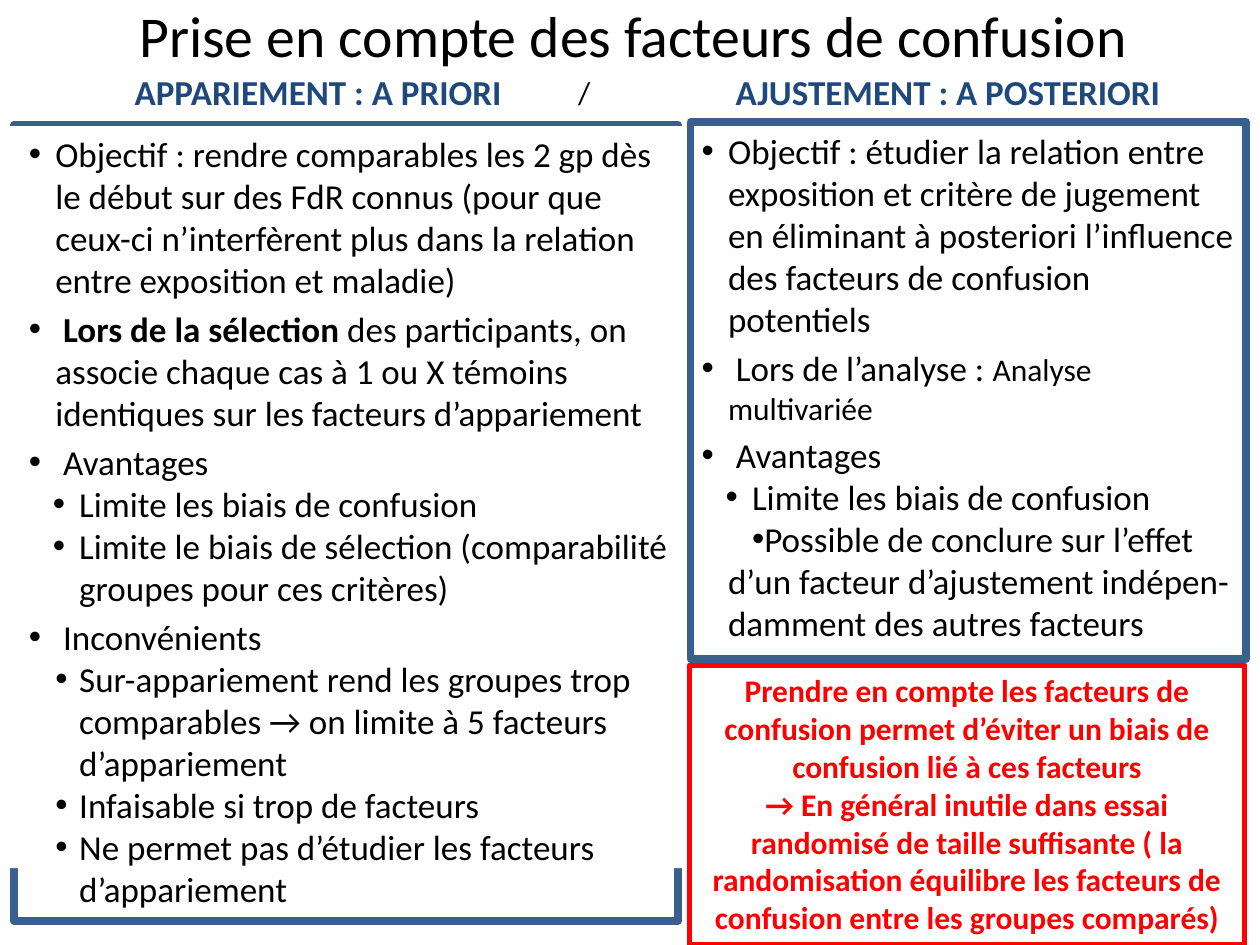
from lxml import etree
from pptx import Presentation
from pptx.dml.color import RGBColor
from pptx.enum.shapes import MSO_SHAPE
from pptx.enum.text import MSO_ANCHOR, PP_ALIGN
from pptx.oxml.ns import qn
from pptx.util import Inches, Pt

RECT = MSO_SHAPE.RECTANGLE
TOP, MIDDLE = MSO_ANCHOR.TOP, MSO_ANCHOR.MIDDLE
LEFT, CENTER = PP_ALIGN.LEFT, PP_ALIGN.CENTER
BLANK = 6
WIDTH, HEIGHT = 10, 7.5
COLS, ROWS = 100, 75
BLACK, WHITE, NAVY, BLUE, RED = "000000", "FFFFFF", "1F497D", "3A5F8C", "FF0000"

MAIN = {"level": 0, "margin": 0.4, "indent": -0.21, "before": 4}
FIRST = {**MAIN, "before": 0}
SUB = {"level": 1, "margin": 0.59, "indent": -0.21, "before": 0}
TIGHT = {**SUB, "indent": -0.19}
HANGING = {**SUB, "margin": 0.4, "indent": 0.19}

PRIOR = [
    (FIRST, ["Objectif : rendre comparables les 2 gp dès le début sur des FdR connus "
             "(pour que ceux-ci n’interfèrent plus dans la relation entre exposition et maladie)"]),
    (MAIN, [(" Lors de la sélection ", {"bold": True}),
            "des participants, on associe chaque cas à 1 ou X témoins identiques "
            "sur les facteurs d’appariement"]),
    (MAIN, [" Avantages"]),
    (SUB, ["Limite les biais de confusion"]),
    (SUB, ["Limite le biais de sélection (comparabilité groupes pour ces critères)"]),
    (MAIN, [" Inconvénients"]),
    (TIGHT, ["Sur-appariement rend les groupes trop comparables → on limite à 5 facteurs d’appariement"]),
    (TIGHT, ["Infaisable si trop de facteurs"]),
    (TIGHT, ["Ne permet pas d’étudier les facteurs d’appariement"]),
]
POSTERIOR = [
    (FIRST, ["Objectif : étudier la relation entre exposition et critère de jugement "
             "en éliminant à posteriori l’influence des facteurs de confusion potentiels"]),
    (MAIN, [" Lors de l’analyse : ", ("Analyse multivariée", {"size": 18})]),
    (MAIN, [" Avantages"]),
    (SUB, ["Limite les biais de confusion"]),
    (HANGING, ["Possible de conclure sur l’effet d’un facteur d’ajustement indépen- "
               "damment des autres facteurs"]),
]
CONCLUSION = [
    "Prendre en compte les facteurs de confusion permet d’éviter un biais de confusion lié à ces facteurs",
    "→ En général inutile dans essai randomisé de taille suffisante "
    "( la randomisation équilibre les facteurs de confusion entre les groupes comparés)",
]


def rgb(value):
    return RGBColor.from_string(value)


class Deck:
    font = "Calibri"

    def __init__(self):
        self.prs = Presentation()
        self.prs.slide_width, self.prs.slide_height = Inches(WIDTH), Inches(HEIGHT)
        self.s = self.prs.slides.add_slide(self.prs.slide_layouts[BLANK])

    def place(self, col, row, cols, rows):
        x, y = WIDTH / COLS, HEIGHT / ROWS
        return [Inches(v) for v in (col * x, row * y, cols * x, rows * y)]

    def frame(self, box, color, width):
        sp = self.s.shapes.add_shape(RECT, *self.place(*box))
        sp.shadow.inherit = False
        sp.fill.solid()
        sp.fill.fore_color.rgb = rgb(WHITE)
        sp.line.color.rgb = rgb(color)
        sp.line.width = Pt(width)
        return sp

    def textbox(self, box, fill=None):
        sp = self.s.shapes.add_textbox(*self.place(*box))
        if fill:
            sp.fill.solid()
            sp.fill.fore_color.rgb = rgb(fill)
        return sp

    def run(self, p, text, size, color, bold=False):
        r = p.add_run()
        r.text = text
        style = {"name": self.font, "size": Pt(size), "bold": bold}
        for name, value in style.items():
            setattr(r.font, name, value)
        r.font.color.rgb = rgb(color)

    def paragraphs(self, sp, count, anchor, wrap=True):
        tf = sp.text_frame
        for name, value in {"word_wrap": wrap, "vertical_anchor": anchor}.items():
            setattr(tf, name, value)
        return [tf.paragraphs[0]] + [tf.add_paragraph() for _ in range(count - 1)]

    def lines(self, sp, texts, size, color, align=LEFT, anchor=MIDDLE, wrap=True, bold=False):
        for p, text in zip(self.paragraphs(sp, len(texts), anchor, wrap), texts):
            p.alignment = align
            self.run(p, text, size, color, bold)

    def bullets(self, sp, items):
        for p, (layout, runs) in zip(self.paragraphs(sp, len(items), TOP), items):
            pPr = p._p.get_or_add_pPr()
            pPr.set("marL", str(Inches(layout["margin"])))
            pPr.set("indent", str(Inches(layout["indent"])))
            etree.SubElement(pPr, qn("a:buFont")).set("typeface", "Arial")
            etree.SubElement(pPr, qn("a:buChar")).set("char", "•")
            p.level = layout["level"]
            p.space_before = Pt(layout["before"])
            for item in runs:
                text, extra = (item, {}) if isinstance(item, str) else item
                self.run(p, text, **{"size": 20, "color": BLACK, **extra})


def main():
    deck = Deck()
    deck.frame((54.8, 9.7, 44.1, 42.6), BLUE, 4.5)
    deck.frame((1.1, 9.9, 52.7, 63.2), BLUE, 4.5)
    deck.lines(deck.textbox((9, -1.5, 82.5, 8.5)),
               ["Prise en compte des facteurs de confusion"], 33, BLACK, CENTER)
    for col, heading in ((9.7, "APPARIEMENT : A PRIORI"), (57.4, "AJUSTEMENT : A POSTERIORI")):
        deck.lines(deck.textbox((col, 4.3, 40.5, 6)), [heading], 20, NAVY, bold=True)
    deck.lines(deck.frame((54.7, 52.8, 44.1, 22.2), RED, 3),
               CONCLUSION, 18, RED, CENTER, TOP, bold=True)
    deck.lines(deck.textbox((44.9, 5.3, 3, 4)), ["/"], 18, BLACK, anchor=TOP, wrap=False)
    deck.bullets(deck.textbox((-0.6, 10, 54.9, 58.9), WHITE), PRIOR)
    deck.bullets(deck.textbox((52.8, 9.8, 46.2, 42.6)), POSTERIOR)
    deck.prs.save("out.pptx")


if __name__ == "__main__":
    main()
